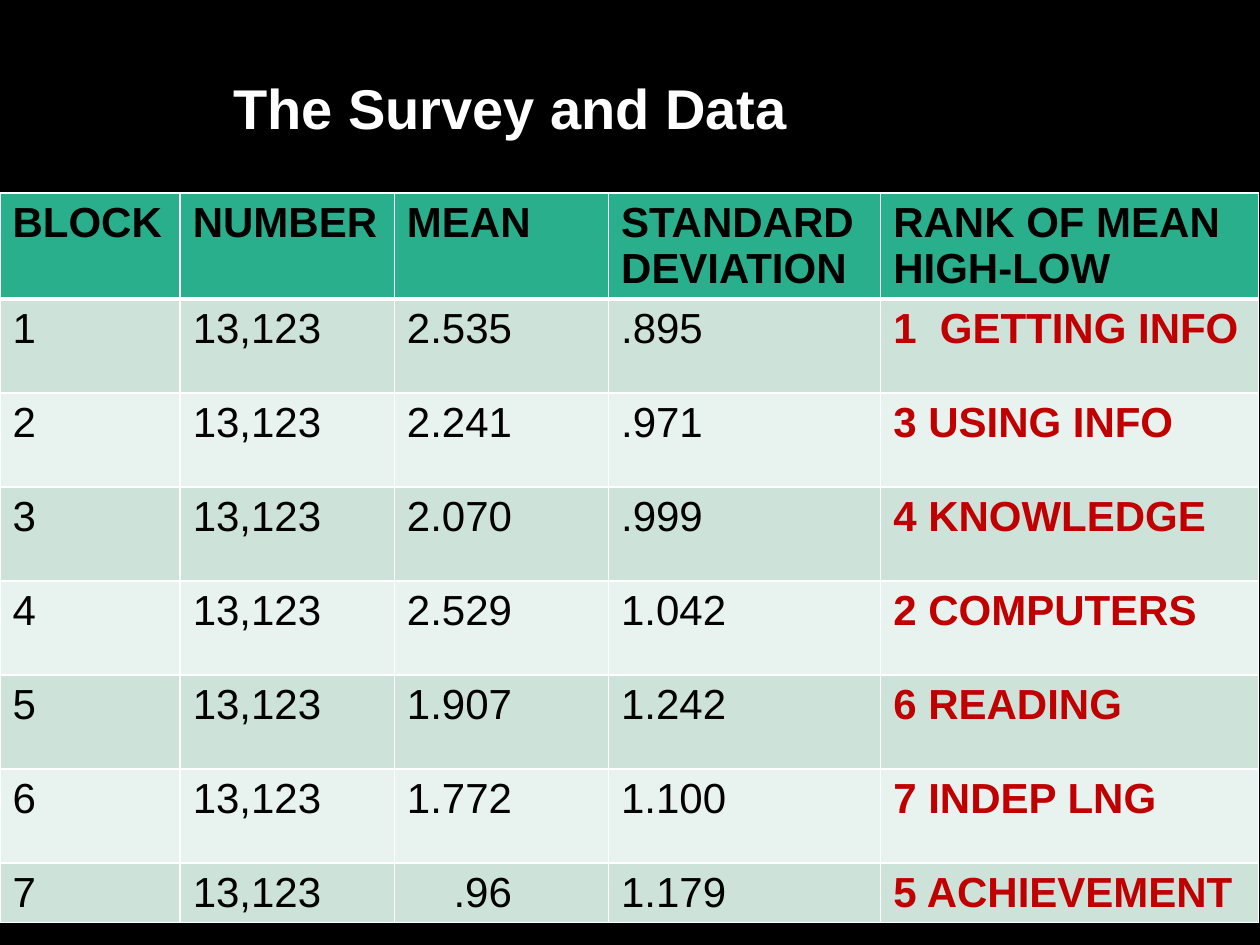
import pptx
import pptx.util
import pptx.dml.color
import pptx.enum.text
import pptx.oxml
import pptx.oxml.ns

TITLE = "The Survey and Data"
HEADER = ["BLOCK", "NUMBER", "MEAN", "STANDARD\nDEVIATION", "RANK OF MEAN\nHIGH-LOW"]
ROWS = [
    ("1", "13,123", "2.535", ".895", "1\tGETTING INFO"),
    ("2", "13,123", "2.241", ".971", "3 USING INFO"),
    ("3", "13,123", "2.070", ".999", "4 KNOWLEDGE"),
    ("4", "13,123", "2.529", "1.042", "2 COMPUTERS"),
    ("5", "13,123", "1.907", "1.242", "6 READING"),
    ("6", "13,123", "1.772", "1.100", "7 INDEP LNG"),
    ("7", "13,123", ".96", "1.179", "5 ACHIEVEMENT"),
]
INDENTED = ".96"

COL_WIDTHS = [1.43, 1.7, 1.7, 2.16, 3]
ROW_HEIGHTS = [0.84] + [0.746] * 6 + [0.47]
TABLE_TOP = 1.53
INDENT = 0.37
FONT = "Arial"
BLACK, WHITE, RED = "000000", "FFFFFF", "C00000"
HEADER_FILL, BANDS = "29AF8C", ("CDE3DA", "E8F2EE")

inch = pptx.util.Inches


def rgb(value):
    return pptx.dml.color.RGBColor.from_string(value)


def add_run(p, text, size, color, bold):
    r = p.add_run()
    r.text = text
    r.font.name = FONT
    r.font.size = pptx.util.Pt(size)
    r.font.bold = bold
    r.font.color.rgb = rgb(color)


def set_borders(cell, bottom, top):
    """Draw white borders; must run before the cell fill is set."""
    tc_pr = cell._tc.get_or_add_tcPr()
    for side, width in (("L", 1), ("R", 1), ("T", top), ("B", bottom)):
        tc_pr.append(pptx.oxml.parse_xml(
            f'<a:ln{side} {pptx.oxml.ns.nsdecls("a")} w="{pptx.util.Pt(width)}">'
            f'<a:solidFill><a:srgbClr val="{WHITE}"/></a:solidFill></a:ln{side}>'))


def fill_cell(cell, text, fill, color, bold):
    cell.fill.solid()
    cell.fill.fore_color.rgb = rgb(fill)
    tf = cell.text_frame
    for i, line in enumerate(text.split("\n")):
        p = tf.paragraphs[0] if i == 0 else tf.add_paragraph()
        if line == INDENTED:
            p._p.get_or_add_pPr().set("marL", str(inch(INDENT)))
        if "\t" in line:
            p._p.get_or_add_pPr().append(pptx.oxml.parse_xml(
                f'<a:tabLst {pptx.oxml.ns.nsdecls("a")}>'
                f'<a:tab pos="{inch(INDENT)}" algn="l"/></a:tabLst>'))
        add_run(p, line, 24, color, bold)


def add_title(s):
    sp = s.shapes.title
    sp.left, sp.top, sp.width, sp.height = map(inch, (1.75, 0.38, 9.73, 1))
    tf = sp.text_frame
    tf.vertical_anchor = pptx.enum.text.MSO_ANCHOR.MIDDLE
    p = tf.paragraphs[0]
    p.alignment = pptx.enum.text.PP_ALIGN.LEFT
    p.line_spacing = 0.9
    add_run(p, TITLE, 32, WHITE, True)


def add_survey_table(s):
    data = [HEADER] + ROWS
    table = s.shapes.add_table(
        len(data), len(HEADER), 0, inch(TABLE_TOP),
        inch(sum(COL_WIDTHS)), inch(sum(ROW_HEIGHTS))).table
    for column, width in zip(table.columns, COL_WIDTHS):
        column.width = inch(width)
    for row, height in zip(table.rows, ROW_HEIGHTS):
        row.height = inch(height)
    for i, values in enumerate(data):
        is_header = i == 0
        fill = HEADER_FILL if is_header else BANDS[(i - 1) % 2]
        for j, text in enumerate(values):
            is_rank = not is_header and j == len(HEADER) - 1
            cell = table.cell(i, j)
            set_borders(cell, bottom=3 if is_header else 1, top=3 if i == 1 else 1)
            fill_cell(cell, text, fill, RED if is_rank else BLACK, is_header or is_rank)


def main():
    prs = pptx.Presentation()
    prs.slide_width, prs.slide_height = inch(10), inch(7.5)
    s = prs.slides.add_slide(prs.slide_layouts[5])
    s.background.fill.solid()
    s.background.fill.fore_color.rgb = rgb(BLACK)
    add_title(s)
    add_survey_table(s)
    prs.save("out.pptx")


if __name__ == "__main__":
    main()
